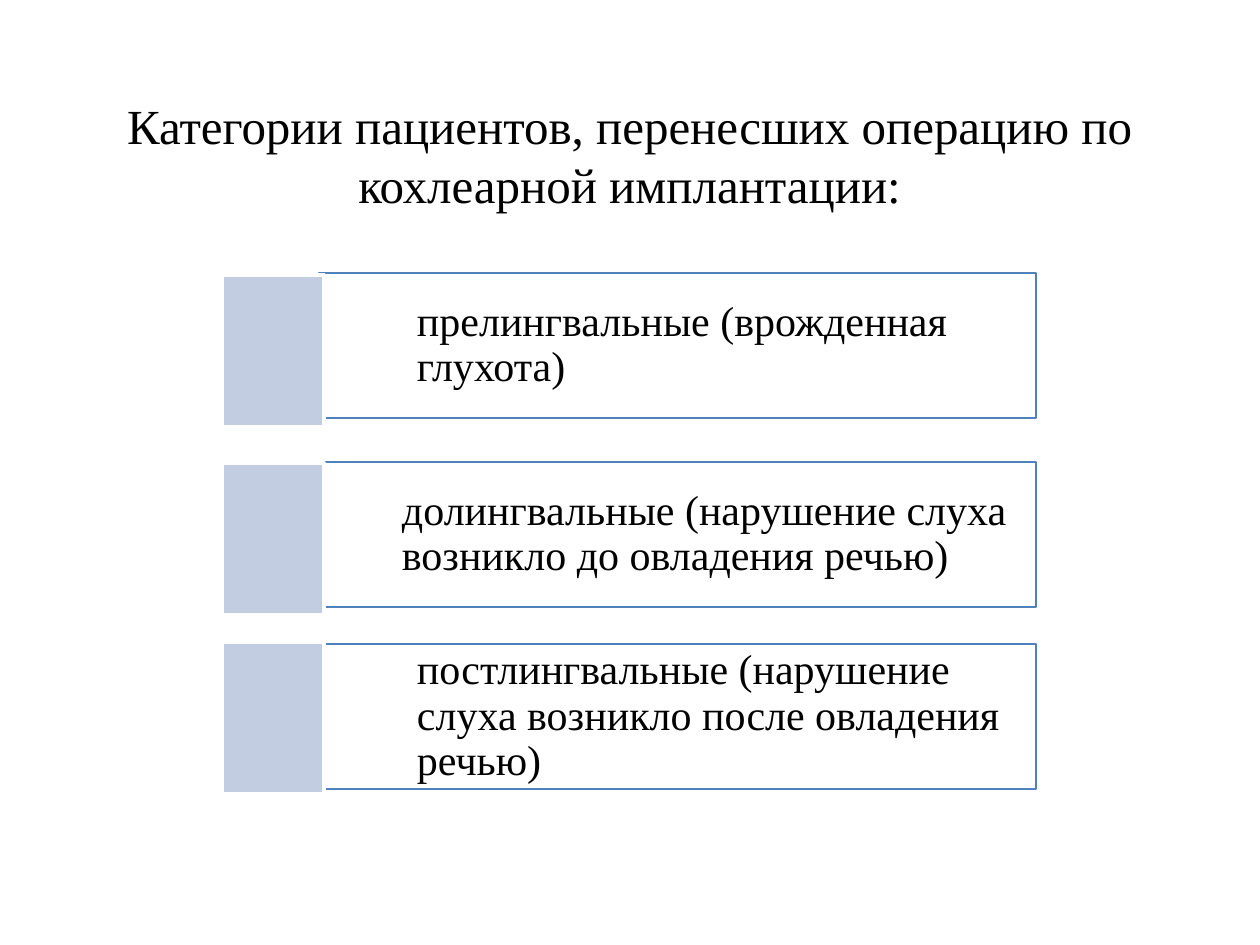
"""Build a slide listing the categories of cochlear implant patients."""
from lxml.etree import SubElement
from pptx import Presentation
from pptx.dml.color import RGBColor
from pptx.enum.shapes import MSO_SHAPE
from pptx.enum.text import MSO_ANCHOR, PP_ALIGN
from pptx.oxml.ns import qn
from pptx.util import Emu, Pt

TITLE = "Категории пациентов, перенесших операцию по кохлеарной имплантации:"
CATEGORIES = [
    {"text": "прелингвальные (врожденная глухота)",
     "panel_left": 319, "panel_top": 273, "marker_top": 275},
    {"text": "долингвальные (нарушение слуха возникло до овладения речью)",
     "panel_left": 304, "panel_top": 462, "marker_top": 463},
    {"text": "постлингвальные (нарушение слуха возникло после овладения речью)",
     "panel_left": 319, "panel_top": 644, "marker_top": 642},
]
COLORS = {"text": "000000", "panel": "FFFFFF", "border": "4F81BD",
          "marker": "C2CDE1", "marker_border": "FFFFFF"}
FONT = "Times New Roman"
PANEL_RIGHT, PANEL_HEIGHT = 1036, 145
MARKER_LEFT, MARKER_WIDTH, MARKER_HEIGHT = 222, 102, 152
PANEL_INSETS = (98, 13, 13, 13)
PANEL_OPACITY = 40


def px(length):
    return Emu(round(length * 914400 / 126))


def color(name):
    return RGBColor.from_string(COLORS[name])


def write(para, text, size):
    span = para.add_run()
    span.text = text
    span.font.name = FONT
    span.font.size = Pt(size)
    span.font.color.rgb = color("text")


def add_rectangle(page, bounds, fill, border, width):
    box = page.shapes.add_shape(MSO_SHAPE.RECTANGLE, *map(px, bounds))
    box.shadow.inherit = False
    box.fill.solid()
    box.fill.fore_color.rgb = color(fill)
    box.line.color.rgb = color(border)
    box.line.width = Pt(width)
    return box


def add_title(page):
    frame = page.shapes.add_textbox(*map(px, (39, 89, 1181, 131))).text_frame
    frame.word_wrap = True
    para = frame.paragraphs[0]
    para.alignment = PP_ALIGN.CENTER
    write(para, TITLE, 28)


def add_category(page, category):
    left = category["panel_left"]
    bounds = (left, category["panel_top"], PANEL_RIGHT - left, PANEL_HEIGHT)
    panel = add_rectangle(page, bounds, "panel", "border", 0.75)
    fill_color = panel.fill._xPr.find(qn("a:solidFill"))[0]
    SubElement(fill_color, qn("a:alpha"), val=str(PANEL_OPACITY * 1000))
    frame = panel.text_frame
    frame.word_wrap = True
    frame.vertical_anchor = MSO_ANCHOR.MIDDLE
    (frame.margin_left, frame.margin_top,
     frame.margin_right, frame.margin_bottom) = map(px, PANEL_INSETS)
    para = frame.paragraphs[0]
    para.alignment = PP_ALIGN.LEFT
    para.line_spacing = 0.9
    write(para, category["text"], 24)
    bounds = (MARKER_LEFT, category["marker_top"], MARKER_WIDTH, MARKER_HEIGHT)
    add_rectangle(page, bounds, "marker", "marker_border", 2)


def main():
    deck = Presentation()
    deck.slide_width, deck.slide_height = px(1260), px(945)
    page = deck.slides.add_slide(deck.slide_layouts[6])
    add_title(page)
    for category in CATEGORIES:
        add_category(page, category)
    deck.save("out.pptx")


if __name__ == "__main__":
    main()
